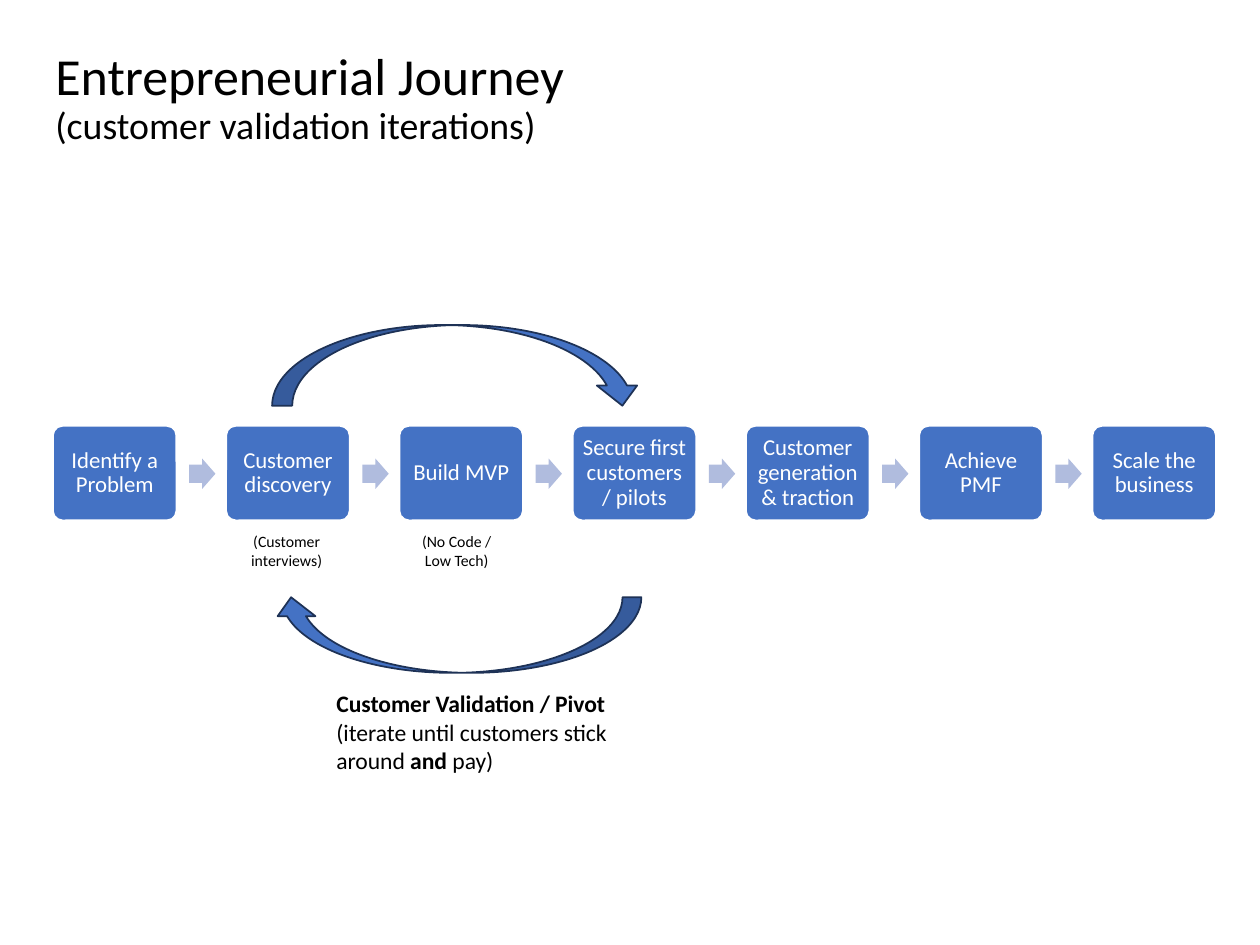
from dataclasses import dataclass

from pptx import Presentation
from pptx.dml.color import RGBColor
from pptx.enum.shapes import MSO_SHAPE
from pptx.enum.text import MSO_ANCHOR, PP_ALIGN
from pptx.shapes.autoshape import Shape
from pptx.slide import Slide
from pptx.text.text import TextFrame
from pptx.util import Emu, Pt

EMU_PER_PX = 4572
BLUE = "4472C4"
PALE_BLUE = "B0BCDE"
NAVY = "1E3256"
WHITE = "FFFFFF"
BLACK = "000000"
STEP_LEFT, STEP_TOP, STEP_PITCH = 84, 676, 275
STEP_WIDTH, STEP_HEIGHT = 196, 150


@dataclass(frozen=True)
class Area:
    """A rectangle in px."""
    left: int
    top: int
    width: int
    height: int


@dataclass(frozen=True)
class Span:
    """A stretch of text in one format."""
    text: str
    size: float
    bold: bool = False
    color: str = BLACK
    breaks: bool = False


@dataclass(frozen=True)
class Label:
    """A free text box with its paragraphs."""
    area: Area
    paragraphs: tuple[tuple[Span, ...], ...]
    frame_format: dict
    paragraph_format: dict


STEPS = (
    "Identify a Problem",
    "Customer discovery",
    "Build MVP",
    "Secure first customers / pilots",
    "Customer generation & traction",
    "Achieve PMF",
    "Scale the business",
)


def px(length: int) -> Emu:
    """Turn px into EMU."""
    return Emu(length * EMU_PER_PX)


def rgb(color: str) -> RGBColor:
    """Turn a hex string into a colour."""
    return RGBColor.from_string(color)


def apply(target: object, values: dict) -> None:
    """Set each attribute named in values."""
    for name, value in values.items():
        setattr(target, name, value)


def margins(across: int, down: int) -> dict:
    """Give the inner margins of a text frame."""
    return {
        "margin_left": px(across), "margin_right": px(across),
        "margin_top": px(down), "margin_bottom": px(down),
    }


def write(frame: TextFrame, paragraphs: tuple[tuple[Span, ...], ...],
          frame_format: dict, paragraph_format: dict) -> None:
    """Fill a text frame with formatted paragraphs."""
    apply(frame, {"word_wrap": True, **frame_format})
    for index, spans in enumerate(paragraphs):
        para = frame.add_paragraph() if index else frame.paragraphs[0]
        apply(para, paragraph_format)
        for span in spans:
            run = para.add_run()
            run.text = span.text
            apply(run.font, {"name": "Calibri", "size": Pt(span.size), "bold": span.bold})
            run.font.color.rgb = rgb(span.color)
            if span.breaks:
                para.add_line_break()


def draw_label(page: Slide, label: Label) -> None:
    """Add a text box."""
    area = label.area
    box = page.shapes.add_textbox(px(area.left), px(area.top), px(area.width), px(area.height))
    write(box.text_frame, label.paragraphs, label.frame_format, label.paragraph_format)


def draw_shape(page: Slide, kind: MSO_SHAPE, area: Area, fill: str, line: str | None = None,
               adjustments: tuple[float, ...] = (), rotation: int = 0) -> Shape:
    """Add a filled preset shape."""
    shape = page.shapes.add_shape(
        kind, px(area.left), px(area.top), px(area.width), px(area.height))
    shape.shadow.inherit = False
    shape.rotation = rotation
    shape.fill.solid()
    shape.fill.fore_color.rgb = rgb(fill)
    if line:
        shape.line.color.rgb = rgb(line)
        shape.line.width = Pt(1)
    else:
        shape.line.fill.background()
    for index, value in enumerate(adjustments):
        shape.adjustments[index] = value
    return shape


def draw_steps(page: Slide) -> None:
    """Add the row of steps joined by block arrows."""
    for index, text in enumerate(STEPS):
        left = STEP_LEFT + index * STEP_PITCH
        step = draw_shape(page, MSO_SHAPE.ROUNDED_RECTANGLE,
                          Area(left, STEP_TOP, STEP_WIDTH, STEP_HEIGHT), BLUE, WHITE, (0.1,))
        write(step.text_frame, ((Span(text, 13, color=WHITE),),),
              {"vertical_anchor": MSO_ANCHOR.MIDDLE, **margins(10, 10)},
              {"alignment": PP_ALIGN.CENTER, "line_spacing": 0.9})
        if index < len(STEPS) - 1:
            draw_shape(page, MSO_SHAPE.RIGHT_ARROW, Area(left + 216, STEP_TOP + 52, 42, 48),
                       PALE_BLUE, adjustments=(0.6, 0.5))


def main() -> None:
    """Build and save the deck."""
    deck = Presentation()
    apply(deck, {"slide_width": px(2000), "slide_height": px(1500)})
    page = deck.slides.add_slide(deck.slide_layouts[6])
    draw_steps(page)
    for area, rotation in ((Area(432, 948, 586, 120), 180), (Area(432, 516, 588, 128), 0)):
        draw_shape(page, MSO_SHAPE.CURVED_DOWN_ARROW, area, BLUE, NAVY, rotation=rotation)
    centered = {"alignment": PP_ALIGN.CENTER}
    labels = (
        Label(Area(68, 88, 1724, 140),
              ((Span("Entrepreneurial Journey", 29.7, breaks=True),
                Span("(customer validation iterations)", 21.6)),),
              {"vertical_anchor": MSO_ANCHOR.MIDDLE}, {"line_spacing": 0.9}),
        Label(Area(372, 834, 166, 80), ((Span("(Customer interviews)", 9),),), {}, centered),
        Label(Area(642, 834, 166, 80), ((Span("(No Code / Low Tech)", 9),),), {}, centered),
        Label(Area(520, 1086, 494, 152),
              ((Span("Customer Validation / Pivot", 13.5, True),),
               (Span("(iterate until customers stick around ", 13.5),
                Span("and", 13.5, True), Span(" pay)", 13.5))),
              margins(14, 8), {}),
    )
    for label in labels:
        draw_label(page, label)
    deck.save("out.pptx")


if __name__ == "__main__":
    main()
